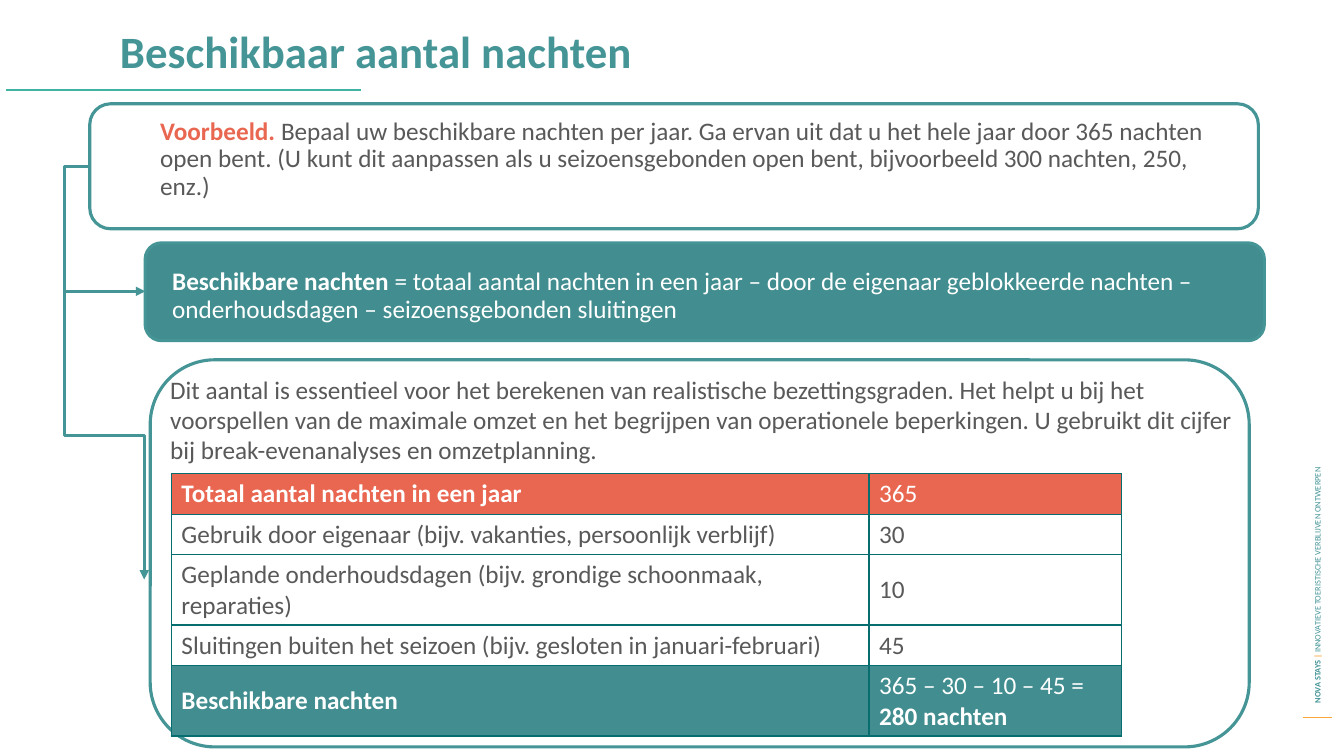
"""Build the slide on the available number of nights."""
from lxml import etree
from pptx import Presentation
from pptx import util as u
from pptx.dml.color import RGBColor
from pptx.enum import shapes, text
from pptx.oxml import ns

PX = 9144
FONT = "Calibri"
TEAL = RGBColor(0x45, 0x95, 0x97)
DARK_TEAL = RGBColor(0x41, 0x8D, 0x8F)
MINT = RGBColor(0x3F, 0xB5, 0xA1)
BORDER = RGBColor(0x08, 0x6D, 0x6E)
CORAL = RGBColor(0xE9, 0x67, 0x51)
ORANGE = RGBColor(0xFB, 0xA6, 0x3B)
GREY = RGBColor(0x59, 0x59, 0x59)
WHITE = RGBColor(0xFF, 0xFF, 0xFF)

ROWS = [
    (40, CORAL, [("Totaal aantal nachten in een jaar", WHITE, True)], [("365", WHITE, False)]),
    (40, None, [("Gebruik door eigenaar (bijv. vakanties, persoonlijk verblijf)", GREY, False)],
     [("30", GREY, False)]),
    (70, None, [("Geplande onderhoudsdagen (bijv. grondige schoonmaak, reparaties)", GREY, False)],
     [("10", GREY, False)]),
    (40, None, [("Sluitingen buiten het seizoen (bijv. gesloten in januari-februari)", GREY, False)],
     [("45", GREY, False)]),
    (70, DARK_TEAL, [("Beschikbare nachten", WHITE, True)],
     [("365 – 30 – 10 – 45 =", WHITE, False), (" 280 nachten", WHITE, True)]),
]


def px(*lengths):
    """Turn px lengths into EMU."""
    return [u.Emu(int(n * PX)) for n in lengths]


def write(tf, runs, size=18, spacing=1.0, anchor=text.MSO_ANCHOR.TOP):
    """Write (words, colour, bold) runs as one left-aligned paragraph."""
    tf.word_wrap = True
    tf.vertical_anchor = anchor
    p = tf.paragraphs[0]
    p.alignment = text.PP_ALIGN.LEFT
    p.line_spacing = spacing
    p.space_before = u.Pt(0)
    for words, colour, bold in runs:
        r = p.add_run()
        r.text = words
        r.font.name = FONT
        r.font.size = u.Pt(size)
        r.font.bold = bold
        r.font.color.rgb = colour


def add_title(s, box, words):
    """Place and fill the title placeholder."""
    title = s.shapes.title
    title.left, title.top, title.width, title.height = px(*box)
    title.text_frame.auto_size = text.MSO_AUTO_SIZE.NONE
    write(title.text_frame, [(words, TEAL, True)], 32, 0.9)


def add_text(s, box, runs, **style):
    """Add a text box holding one paragraph."""
    sp = s.shapes.add_textbox(*px(*box))
    write(sp.text_frame, runs, **style)
    return sp


def add_panel(s, box, fill=None):
    """Add a rounded panel with a teal outline."""
    sp = s.shapes.add_shape(shapes.MSO_SHAPE.FLOWCHART_ALTERNATE_PROCESS, *px(*box))
    sp.shadow.inherit = False
    if fill is None:
        sp.fill.background()
    else:
        sp.fill.solid()
        sp.fill.fore_color.rgb = fill
    sp.line.color.rgb = TEAL
    sp.line.width = u.Pt(2.25)


def add_line(s, ends, colour, width, kind=shapes.MSO_CONNECTOR.STRAIGHT):
    """Add a connector without shadow."""
    line = s.shapes.add_connector(kind, *px(*ends))
    line.line.color.rgb = colour
    line.line.width = u.Pt(width)
    etree.SubElement(line._element.spPr, ns.qn("a:effectLst"))
    return line


def add_elbow(s, ends, bend, upright=False):
    """Add an elbow arrow; an upright one leaves and arrives vertically."""
    if upright:
        x1, y1, x2, y2 = ends
        cx, cy, dx, dy = (x1 + x2) / 2, (y1 + y2) / 2, x2 - x1, y2 - y1
        ends = cx + dy / 2, cy - dx / 2, cx - dy / 2, cy + dx / 2
    elbow = add_line(s, ends, TEAL, 2.25, shapes.MSO_CONNECTOR.ELBOW)
    spPr = elbow._element.spPr
    if upright:
        spPr.find(ns.qn("a:xfrm")).set("rot", "16200000")
    guides = spPr.find(ns.qn("a:prstGeom")).find(ns.qn("a:avLst"))
    etree.SubElement(guides, ns.qn("a:gd"), name="adj1", fmla=f"val {round(bend * 100000)}")
    etree.SubElement(spPr.find(ns.qn("a:ln")), ns.qn("a:tailEnd"), type="triangle")


def add_borders(cell):
    """Draw a thin line on all four sides of a cell."""
    tcPr = cell._tc.get_or_add_tcPr()
    for side in ("lnL", "lnR", "lnT", "lnB"):
        ln = etree.SubElement(tcPr, ns.qn(f"a:{side}"), w=str(u.Pt(1)))
        fill = etree.SubElement(ln, ns.qn("a:solidFill"))
        etree.SubElement(fill, ns.qn("a:srgbClr"), val=str(BORDER))


def add_nights_table(s, left, top, widths):
    """Add the table that works out the available nights."""
    height = sum(row[0] for row in ROWS)
    frame = s.shapes.add_table(len(ROWS), len(widths), *px(left, top, sum(widths), height))
    table = frame.table
    table.first_row = table.horz_banding = False
    for column, width in zip(table.columns, px(*widths)):
        column.width = width
    for row, (height, fill, *contents) in zip(table.rows, ROWS):
        row.height = px(height)[0]
        for cell, runs in zip(row.cells, contents):
            add_borders(cell)
            if fill is None:
                cell.fill.background()
            else:
                cell.fill.solid()
                cell.fill.fore_color.rgb = fill
            write(cell.text_frame, runs)
            cell.vertical_anchor = text.MSO_ANCHOR.MIDDLE


def main():
    """Build and save the slide."""
    prs = Presentation()
    prs.slide_width, prs.slide_height = px(1333, 750)
    s = prs.slides.add_slide(prs.slide_layouts[5])
    middle = text.MSO_ANCHOR.MIDDLE

    add_line(s, (1292, 712, 1321, 712), ORANGE, 0.75)
    footer = add_text(s, (1018, 409, 577, 20), [
        ("NOVA STAYS ", TEAL, True), ("| ", ORANGE, True),
        ("INNOVATIEVE TOERISTISCHE VERBLIJVEN ONTWERPEN", TEAL, False)], size=6, anchor=middle)
    footer.rotation = 270

    add_title(s, (109, 25, 1161, 88), "Beschikbaar aantal nachten")
    add_line(s, (6, 89, 358, 89), MINT, 1.5)

    add_panel(s, (144, 241, 1110, 97), DARK_TEAL)
    add_panel(s, (89, 103, 1159, 124))
    add_panel(s, (149, 357, 1090, 384))

    add_text(s, (149, 113, 1089, 88), [
        ("Voorbeeld. ", CORAL, True),
        ("Bepaal uw beschikbare nachten per jaar. Ga ervan uit dat u het hele jaar door "
         "365 nachten open bent. (U kunt dit aanpassen als u seizoensgebonden open bent, "
         "bijvoorbeeld 300 nachten, 250, enz.)", GREY, False)], spacing=0.9)
    add_text(s, (161, 250, 1093, 88), [
        ("Beschikbare nachten ", WHITE, True),
        ("= totaal aantal nachten in een jaar – door de eigenaar geblokkeerde nachten – "
         "onderhoudsdagen – seizoensgebonden sluitingen", WHITE, False)],
        spacing=0.9, anchor=middle)
    add_text(s, (159, 366, 1074, 88), [
        ("Dit aantal is essentieel voor het berekenen van realistische bezettingsgraden. "
         "Het helpt u bij het voorspellen van de maximale omzet en het begrijpen van "
         "operationele beperkingen. U gebruikt dit cijfer bij break-evenanalyses en "
         "omzetplanning.", GREY, False)])

    add_elbow(s, (89, 165, 144, 289), -0.46)
    add_elbow(s, (64, 289, 143, 575), 0.5, upright=True)
    add_nights_table(s, 170, 470, (692, 250))
    prs.save("out.pptx")


if __name__ == "__main__":
    main()
